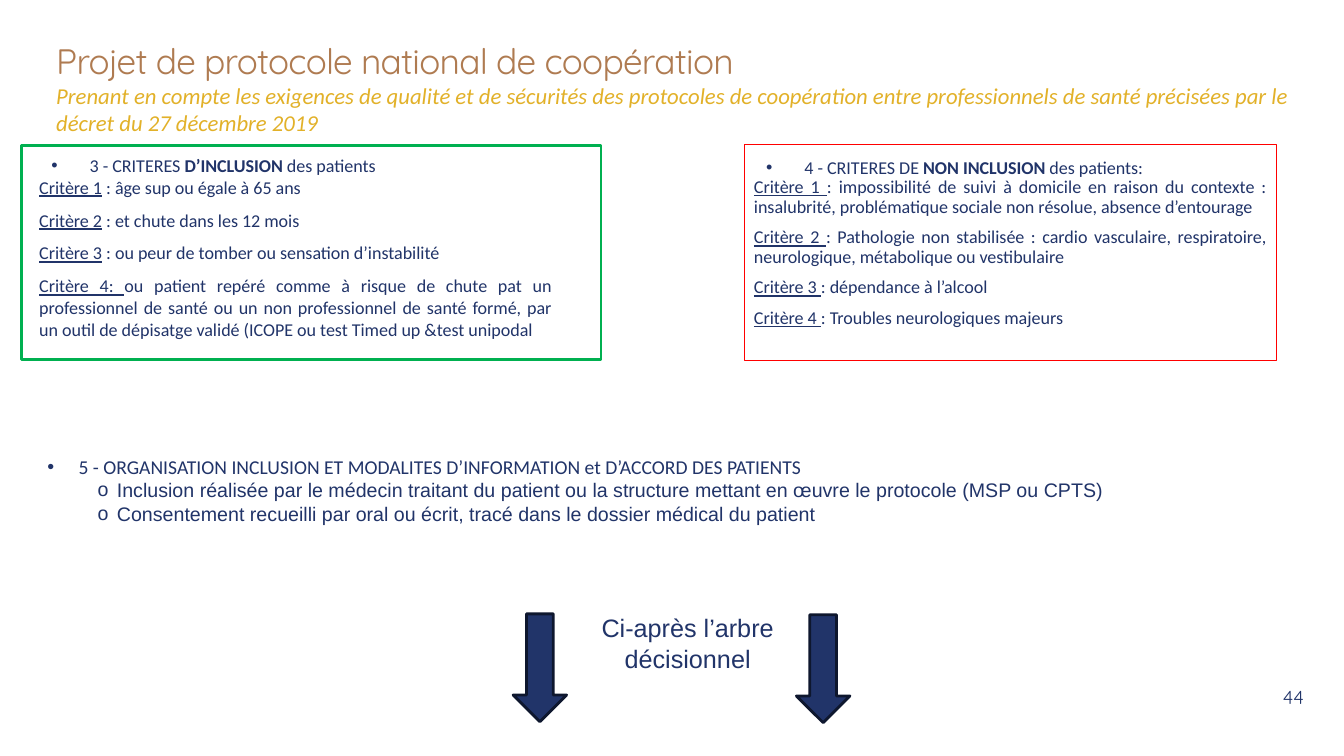
import pptx
import pptx.util
import pptx.dml.color
import pptx.enum.shapes
import pptx.enum.text
import pptx.oxml.ns
import lxml.etree

Pt = pptx.util.Pt
ALIGN = pptx.enum.text.PP_ALIGN
ANCHOR = pptx.enum.text.MSO_ANCHOR
SHAPES = pptx.enum.shapes.MSO_SHAPE
NAVY = "213469"


def color(hex_value):
    return pptx.dml.color.RGBColor.from_string(hex_value)


def assign(target, values):
    for name, value in values.items():
        setattr(target, name, value)


class Sheet:
    """Current slide, measured in 100 columns by 100 rows."""

    margins = dict.fromkeys(
        ("margin_left", "margin_top", "margin_right", "margin_bottom"),
        pptx.util.Inches(0.1))

    def __init__(self, deck):
        self.column, self.row = deck.slide_width / 100, deck.slide_height / 100
        self.slide = deck.slides.add_slide(deck.slide_layouts[6])

    def place(self, left, top, width, height):
        return (int(left * self.column), int(top * self.row),
                int(width * self.column), int(height * self.row))

    def text_box(self, area, **frame_format):
        frame = self.slide.shapes.add_textbox(*self.place(*area)).text_frame
        assign(frame, {"word_wrap": True, **frame_format})
        return frame

    def outline(self, preset, area, line, weight, fill=None):
        shape = self.slide.shapes.add_shape(preset, *self.place(*area))
        shape.shadow.inherit = False
        if fill:
            shape.fill.solid()
            shape.fill.fore_color.rgb = color(fill)
        else:
            shape.fill.background()
        shape.line.color.rgb = color(line)
        shape.line.width = Pt(weight)
        return shape

    def paragraph(self, frame, bullet=None, indent=(0, 0), **paragraph_format):
        """Use the empty first paragraph, or add one, and format it."""
        first = frame.paragraphs[0]
        paragraph = frame.add_paragraph() if first.runs else first
        if bullet:
            properties = paragraph._p.get_or_add_pPr()
            for name, inches in zip(("marL", "indent"), indent):
                properties.set(name, str(pptx.util.Inches(inches)))
            qn = pptx.oxml.ns.qn
            bullet_color = lxml.etree.SubElement(properties, qn("a:buClr"))
            lxml.etree.SubElement(bullet_color, qn("a:srgbClr"), val=NAVY)
            lxml.etree.SubElement(properties, qn("a:buFont"), typeface="Arial")
            lxml.etree.SubElement(properties, qn("a:buChar"), char=bullet)
        assign(paragraph, paragraph_format)
        return paragraph

    def run(self, paragraph, text, size, font="Calibri", ink=NAVY, **font_format):
        run = paragraph.add_run()
        run.text = text
        assign(run.font, {"size": Pt(size), "name": font, **font_format})
        run.font.color.rgb = color(ink)
        return run

    def criteria(self, frame, heading, heading_spacing, spacing, items):
        """Bulleted heading (start, bold part, end), then label and detail pairs."""
        size = 12.9
        title = self.paragraph(frame, "•", (0.5, -0.38), alignment=ALIGN.JUSTIFY,
                               line_spacing=heading_spacing)
        for text, bold in zip(heading, (False, True, False)):
            self.run(title, text, size, bold=bold)
        for label, detail in items:
            item = self.paragraph(frame, alignment=ALIGN.JUSTIFY,
                                  line_spacing=spacing, space_after=Pt(8))
            self.run(item, label, size, underline=True)
            self.run(item, detail, size)


INCLUSION = [
    ("Critère 1", " : âge sup ou égale à 65 ans"),
    ("Critère 2", " : et chute dans les 12 mois"),
    ("Critère 3", " : ou peur de tomber ou sensation d’instabilité"),
    ("Critère 4: ", "ou patient repéré comme à risque de chute pat un professionnel "
     "de santé ou un non professionnel de santé formé, par un outil de dépisatge "
     "validé (ICOPE ou test Timed up &test unipodal"),
]
NON_INCLUSION = [
    ("Critère 1 ", ": impossibilité de suivi à domicile en raison du contexte : "
     "insalubrité, problématique sociale non résolue, absence d’entourage"),
    ("Critère 2 ", ": Pathologie non stabilisée : cardio vasculaire, respiratoire, "
     "neurologique, métabolique ou vestibulaire"),
    ("Critère 3 ", ": dépendance à l’alcool"),
    ("Critère 4 ", ": Troubles neurologiques majeurs"),
]
ORGANISATION = [
    "Inclusion réalisée par le médecin traitant du patient ou la structure mettant "
    "en œuvre le protocole (MSP ou CPTS)",
    "Consentement recueilli par oral ou écrit, tracé dans le dossier médical du patient",
]


def main():
    deck = pptx.Presentation()
    deck.slide_width, deck.slide_height = map(pptx.util.Inches, (13.33, 7.5))
    sheet = Sheet(deck)

    title = sheet.paragraph(sheet.text_box((3.45, 3.87, 93.17, 11.2), **sheet.margins))
    project = sheet.run(title, "Projet de protocole national de coopération", 25.2,
                        "Quicksand", "AF7B51")
    project._r.get_or_add_rPr().set("spc", "-50")
    title.add_line_break()
    sheet.run(title, "Prenant en compte les exigences de qualité et de sécurités des "
              "protocoles de coopération entre professionnels de santé précisées par "
              "le décret du 27 décembre 2019", 16.2, ink="E2B129", italic=True)

    included = sheet.text_box((2.18, 18.53, 39.61, 31.47), **sheet.margins)
    sheet.criteria(included, ("3 - CRITERES ", "D’INCLUSION", " des patients"),
                   1.2, 1.0, INCLUSION)
    sheet.outline(SHAPES.RECTANGLE, (1.58, 19.2, 43.14, 28.4), "00B050", 2)

    excluded = sheet.outline(SHAPES.RECTANGLE, (55.36, 19.07, 39.61, 28.67),
                             "FF0000", 0.75).text_frame
    assign(excluded, {"word_wrap": True, "vertical_anchor": ANCHOR.TOP, **sheet.margins})
    sheet.criteria(excluded, ("4 - CRITERES DE ", "NON INCLUSION", " des patients:"),
                   1.1, 0.9, NON_INCLUSION)

    organisation = sheet.text_box((2.78, 59.47, 94.45, 14.8))
    sheet.run(sheet.paragraph(organisation, "•", (0.31, -0.31)),
              "5 - ORGANISATION INCLUSION ET MODALITES D’INFORMATION et D’ACCORD "
              "DES PATIENTS", 14)
    for step in ORGANISATION:
        sheet.run(sheet.paragraph(organisation, "o", (0.69, -0.19), level=1),
                  step, 14, "Arial")

    for left, top in ((38.18, 81.2), (59.26, 81.33)):
        sheet.outline(SHAPES.DOWN_ARROW, (left, top, 3.98, 14.27), "0E172E", 2, NAVY)
    decision_tree = sheet.text_box((42.91, 80.4, 16.5, 9.47))
    sheet.run(sheet.paragraph(decision_tree, alignment=ALIGN.CENTER),
              "Ci-après l’arbre décisionnel", 18, "Arial")

    page_number = sheet.text_box((91.75, 88.4, 6, 7.6),
                                 vertical_anchor=ANCHOR.MIDDLE, **sheet.margins)
    sheet.run(sheet.paragraph(page_number, alignment=ALIGN.RIGHT), "44", 13.5, "Quicksand")

    deck.save("out.pptx")


if __name__ == "__main__":
    main()
